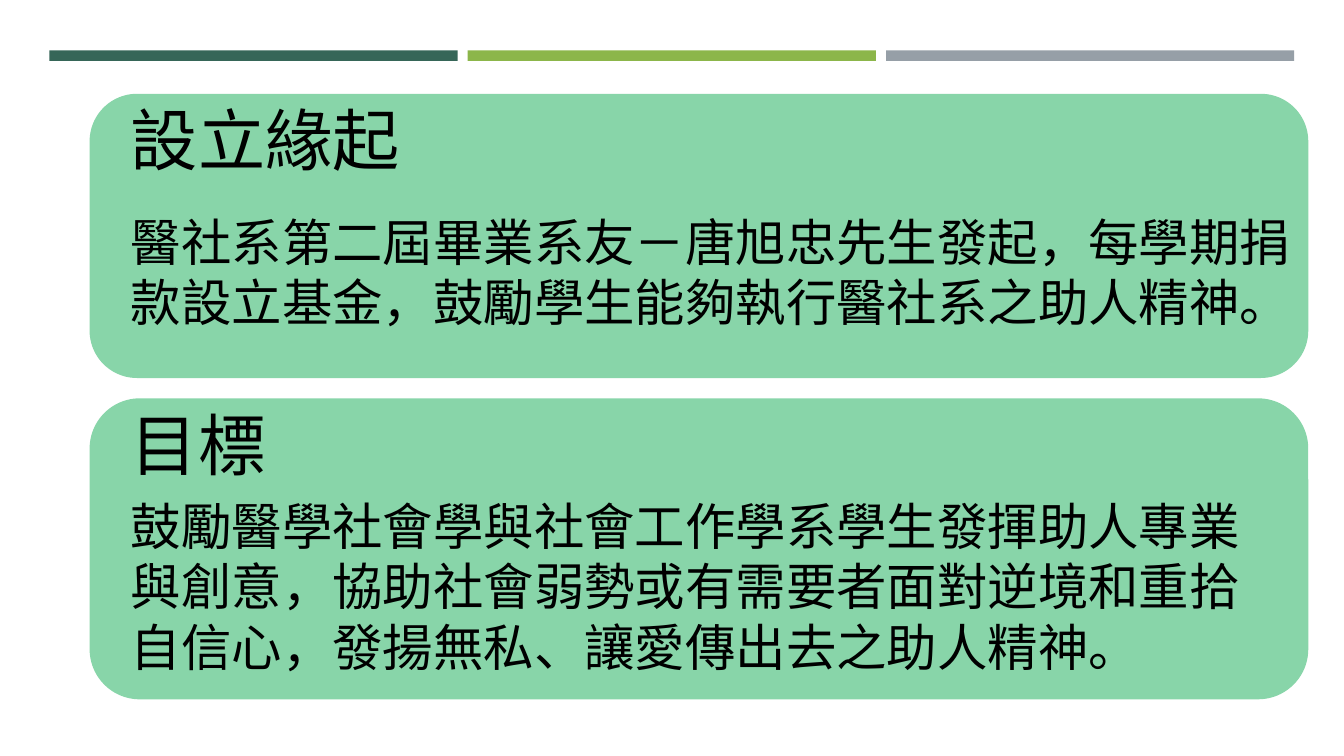
"""Build a slide on a student fund: its origin and its goal, on two green cards."""
import pptx
import pptx.util
import pptx.dml.color
import pptx.enum.shapes
import pptx.enum.text

Pt = pptx.util.Pt
SHAPE = pptx.enum.shapes.MSO_SHAPE

CARDS = [
    {"head": "設立緣起",
     "body": "醫社系第二屆畢業系友－唐旭忠先生發起，每學期捐款設立基金，鼓勵學生能夠執行醫社系之助人精神。",
     "top": 67, "height": 203, "drop": 80, "wide": 848, "tall": 94.5},
    {"head": "目標",
     "body": "鼓勵醫學社會學與社會工作學系學生發揮助人專業與創意，協助社會弱勢或有需要者面對逆境和重拾自信心，發揚無私、讓愛傳出去之助人精神。",
     "top": 284.5, "height": 215, "drop": 65.5, "wide": 828.5, "tall": 138},
]

THEME = {
    "bars": ["366658", "8CB64A", "969FA7"],
    "card": "88D5A9",
    "ink": "000000",
    "font": "Times New Roman",
    "head": 48,
    "body": 36,
}

WIDTH, HEIGHT = 960, 540
BAR = {"left": 35.3, "top": 36, "width": 291.6, "height": 7.5, "gap": 7.2}
CARD_LEFT, CARD_WIDTH = 64, 870.5
TEXT_LEFT = 86.5
HEAD_WIDTH, HEAD_HEIGHT = 313, 65.5


def tint(code):
    return pptx.dml.color.RGBColor.from_string(code)


def add_block(slide, kind, box, fill):
    block = slide.shapes.add_shape(kind, *map(Pt, box))
    block.shadow.inherit = False
    block.fill.solid()
    block.fill.fore_color.rgb = tint(fill)
    block.line.fill.background()


def add_text(slide, text, box, size):
    frame = slide.shapes.add_textbox(*map(Pt, box)).text_frame
    frame.word_wrap = True
    frame.auto_size = pptx.enum.text.MSO_AUTO_SIZE.SHAPE_TO_FIT_TEXT
    line = frame.paragraphs[0]
    line.text = text
    line.font.name = THEME["font"]
    line.font.size = Pt(size)
    line.font.color.rgb = tint(THEME["ink"])


def main():
    deck = pptx.Presentation()
    deck.slide_width, deck.slide_height = Pt(WIDTH), Pt(HEIGHT)
    slide = deck.slides.add_slide(deck.slide_layouts[6])

    for spot, fill in enumerate(THEME["bars"]):
        left = BAR["left"] + spot * (BAR["width"] + BAR["gap"])
        box = (left, BAR["top"], BAR["width"], BAR["height"])
        add_block(slide, SHAPE.RECTANGLE, box, fill)

    for card in CARDS:
        top = card["top"]
        add_block(slide, SHAPE.ROUNDED_RECTANGLE,
                  (CARD_LEFT, top, CARD_WIDTH, card["height"]), THEME["card"])
        add_text(slide, card["head"],
                 (TEXT_LEFT, top, HEAD_WIDTH, HEAD_HEIGHT), THEME["head"])
        add_text(slide, card["body"],
                 (TEXT_LEFT, top + card["drop"], card["wide"], card["tall"]),
                 THEME["body"])

    deck.save("out.pptx")


if __name__ == "__main__":
    main()
